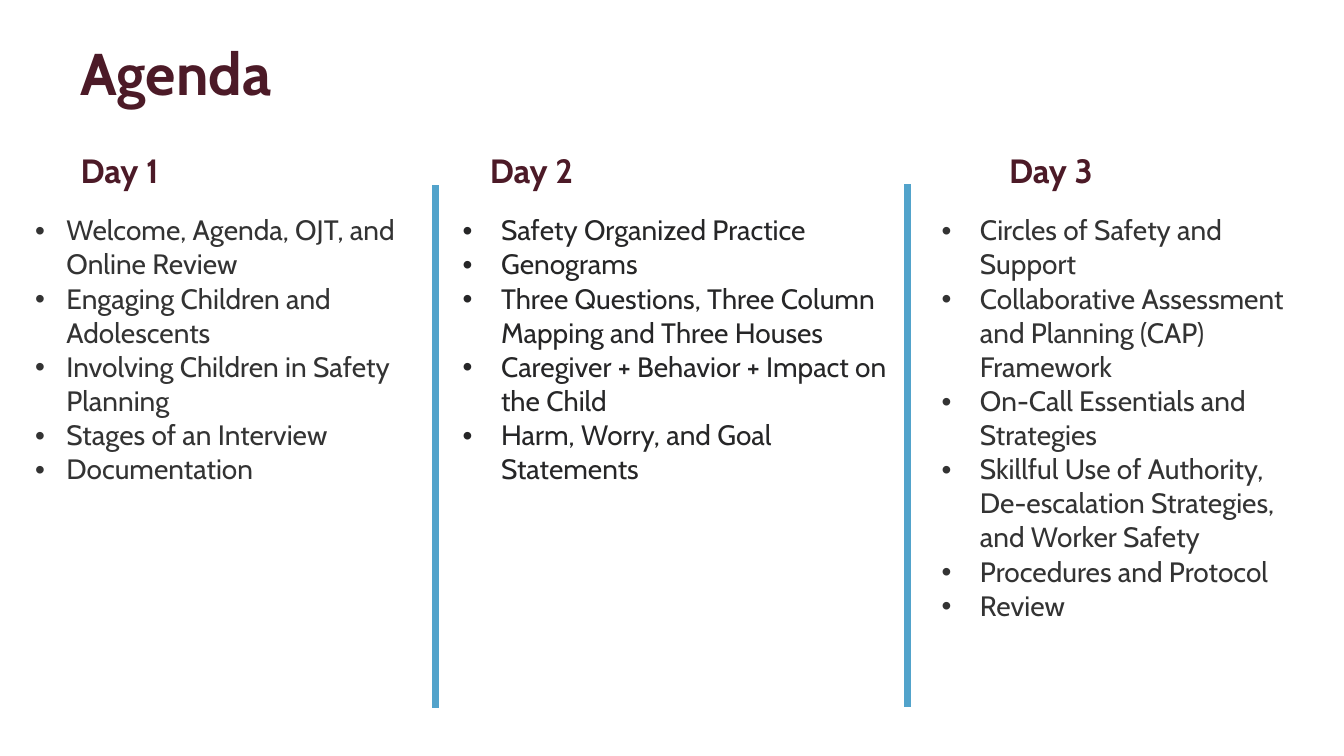
from lxml import etree
from pptx import Presentation
from pptx import util as u
from pptx.dml import color
from pptx.enum import shapes, text
from pptx.oxml import ns

EMU_PER_PX = 9144
FONT = "Cabin"
MAROON = "4C1A27"
BLUE = "52A3CB"
CHARCOAL = "333333"
INK = "262627"
PLAIN_TABLE_STYLE = "{2D5ABB26-0587-4C30-8999-92F81FD0307C}"

DAYS = [
    {"heading": "Day 1", "heading_left": 70, "box": (1, 207, 464, 613),
     "gutter": 23, "indent": 31, "color": CHARCOAL,
     "topics": ["Welcome, Agenda, OJT, and Online Review",
                "Engaging Children and Adolescents",
                "Involving Children in Safety Planning",
                "Stages of an Interview",
                "Documentation"]},
    {"heading": "Day 2", "heading_left": 476, "box": (425, 207, 487, 678),
     "gutter": 23, "indent": 38, "color": INK,
     "topics": ["Safety Organized Practice",
                "Genograms",
                "Three Questions, Three Column Mapping and Three Houses",
                "Caregiver + Behavior + Impact on the Child",
                "Harm, Worry, and Goal Statements"]},
    {"heading": "Day 3", "heading_left": 991, "box": (846, 207, 455, 450),
     "gutter": 78, "indent": 38, "color": CHARCOAL,
     "topics": ["Circles of Safety and Support",
                "Collaborative Assessment and Planning (CAP) Framework",
                "On-Call Essentials and Strategies",
                "Skillful Use of Authority, De-escalation Strategies, and Worker Safety",
                "Procedures and Protocol",
                "Review"]},
]
DIVIDERS = [(432, 184), (900, 183)]
DIVIDER_HEIGHT = 518


def px(length):
    return u.Emu(length * EMU_PER_PX)


def rgb(value):
    return color.RGBColor.from_string(value)


def style_runs(paragraph, size, value, bold=False):
    for run in paragraph.runs:
        run.font.name = FONT
        run.font.size = u.Pt(size)
        run.font.bold = bold
        run.font.color.rgb = rgb(value)


def add_heading(slide, box, words, size):
    frame = slide.shapes.add_textbox(*map(px, box)).text_frame
    frame.word_wrap = True
    frame.vertical_anchor = text.MSO_ANCHOR.MIDDLE
    frame.text = words
    paragraph = frame.paragraphs[0]
    paragraph.line_spacing = 0.9
    style_runs(paragraph, size, MAROON, bold=True)


def add_bullet(paragraph, indent):
    properties = paragraph._p.get_or_add_pPr()
    properties.set("marL", str(px(indent)))
    properties.set("indent", str(-px(indent)))
    etree.SubElement(properties, ns.qn("a:buFont")).set("typeface", "Arial")
    etree.SubElement(properties, ns.qn("a:buChar")).set("char", "•")


def add_topics(slide, box, day):
    table = slide.shapes.add_table(1, 2, *map(px, box)).table
    table.first_row = table.horz_banding = False
    table._tbl.tblPr.find(ns.qn("a:tableStyleId")).text = PLAIN_TABLE_STYLE
    table.columns[0].width = px(day["gutter"])
    table.columns[1].width = px(box[2] - day["gutter"])
    for cell in table.iter_cells():
        cell.fill.background()
    frame = table.cell(0, 1).text_frame
    frame.text = "\n".join(day["topics"])
    for paragraph in frame.paragraphs:
        add_bullet(paragraph, day["indent"])
        style_runs(paragraph, 20, day["color"])


def add_divider(slide, left, top):
    line = slide.shapes.add_connector(
        shapes.MSO_CONNECTOR.STRAIGHT,
        px(left), px(top), px(left), px(top + DIVIDER_HEIGHT))
    line.line.color.rgb = rgb(BLUE)
    line.line.width = u.Pt(4.5)
    etree.SubElement(line._element.spPr, ns.qn("a:effectLst"))


def add_agenda(presentation):
    slide = presentation.slides.add_slide(presentation.slide_layouts[6])
    add_heading(slide, (70, 40, 1192, 72), "Agenda", 42)
    for day in DAYS:
        add_topics(slide, day["box"], day)
    for day in DAYS:
        add_heading(slide, (day["heading_left"], 135, 142, 72), day["heading"], 24)
    for left, top in DIVIDERS:
        add_divider(slide, left, top)


def main():
    presentation = Presentation()
    presentation.slide_width = px(1333)
    presentation.slide_height = px(750)
    add_agenda(presentation)
    presentation.save("out.pptx")


if __name__ == "__main__":
    main()
